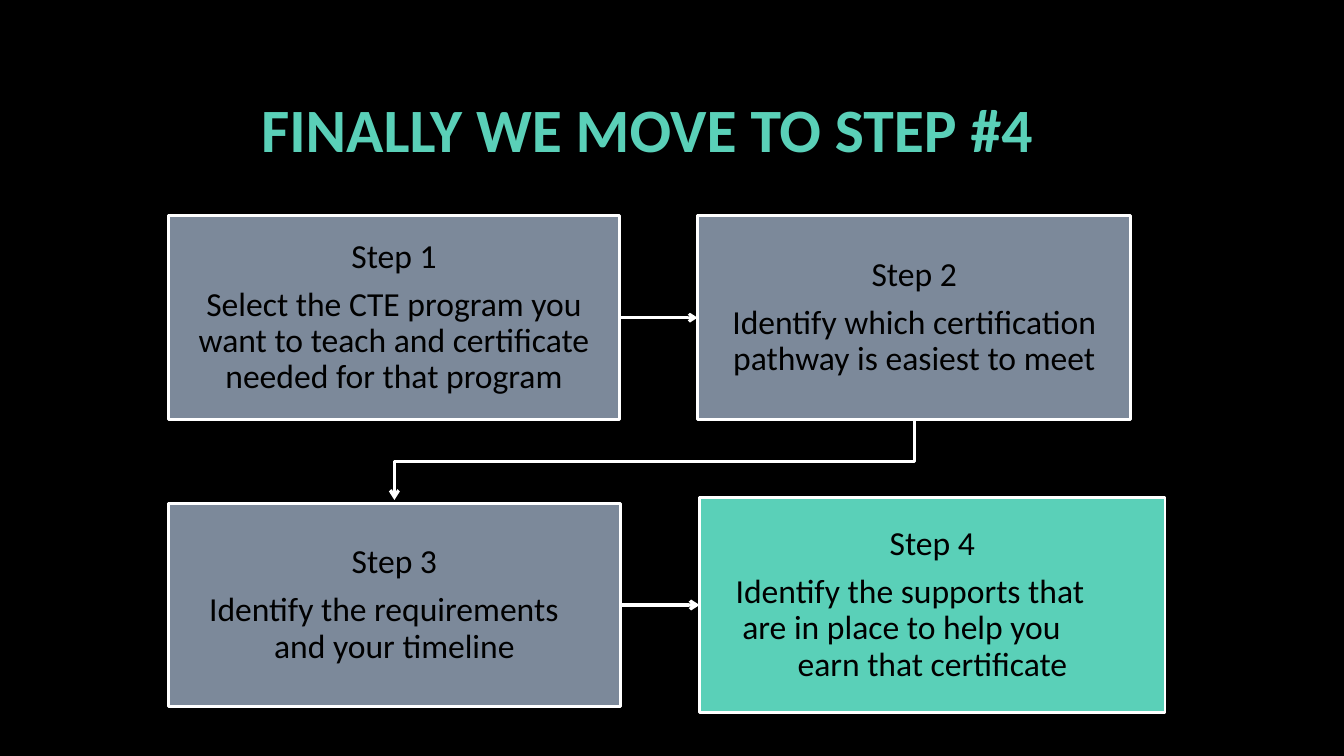
from lxml import etree
from pptx import Presentation
from pptx.dml.color import RGBColor
from pptx.enum import shapes, text
from pptx.oxml import ns
from pptx.util import Cm, Pt

COLORS = {"black": "000000", "white": "FFFFFF", "slate": "7C899A", "mint": "5AD0B8"}
CENTER, LEFT = text.PP_ALIGN.CENTER, text.PP_ALIGN.LEFT


def color(name):
    return RGBColor.from_string(COLORS[name])


def style_arrow(sp, width):
    sp.line.color.rgb = color("white")
    sp.line.width = Pt(width)
    ln = sp.element.spPr.find(ns.qn("a:ln"))
    etree.SubElement(ln, ns.qn("a:tailEnd"), type="arrow")


prs = Presentation()
prs.slide_width, prs.slide_height = Cm(33.87), Cm(19.05)
s = prs.slides.add_slide(prs.slide_layouts[5])
s.background.fill.solid()
s.background.fill.fore_color.rgb = color("black")

title = s.shapes.title
title.left, title.top, title.width, title.height = Cm(4.29), Cm(0), Cm(24.05), Cm(6.43)
tf = title.text_frame
tf.text = "FINALLY WE MOVE TO STEP #4"
tf.vertical_anchor = text.MSO_ANCHOR.MIDDLE
p = tf.paragraphs[0]
p.alignment = CENTER
font = p.runs[0].font
font.name, font.size, font.bold = "Calibri", Pt(44), True
font.color.rgb = color("mint")

steps = [
    (4.24, 5.44, 11.38, 5.13, "slate",
     [("Select the CTE program you want to teach and certificate needed for that program", None)]),
    (17.58, 5.44, 10.92, 5.13, "slate",
     [("Identify which certification pathway is easiest to meet", None)]),
    (4.24, 12.68, 11.4, 5.13, "slate",
     [("Identify the requirements", 0.6), ("and your timeline", None)]),
    (17.63, 12.54, 11.73, 5.41, "mint",
     [("Identify the supports that", 0.48), ("are in place to help you", 0.65),
      ("earn that certificate", 2.04)]),
]
boxes = []
for number, (left, top, width, height, fill, lines) in enumerate(steps, 1):
    sp = s.shapes.add_shape(shapes.MSO_SHAPE.RECTANGLE, Cm(left), Cm(top), Cm(width), Cm(height))
    sp.name = f"Step {number}"
    sp.shadow.inherit = False
    sp.fill.solid()
    sp.fill.fore_color.rgb = color(fill)
    sp.line.color.rgb = color("white")
    sp.line.width = Pt(2)
    tf = sp.text_frame
    tf.word_wrap = True
    tf.vertical_anchor = text.MSO_ANCHOR.MIDDLE
    tf.margin_left = tf.margin_right = tf.margin_top = tf.margin_bottom = Cm(0.43)
    for i, (line, indent) in enumerate([(f"Step {number}", None)] + lines):
        p = tf.add_paragraph() if i else tf.paragraphs[0]
        p.text = line
        p.line_spacing = 0.9
        p.space_after = Pt(0 if i else 8.4)
        p.alignment = CENTER if indent is None else LEFT
        if indent is not None:
            p._p.get_or_add_pPr().set("marL", str(Cm(indent)))
        font = p.runs[0].font
        font.name, font.size = "Calibri", Pt(24)
        font.color.rgb = color("black")
    boxes.append(sp)

for start, end, width in [(0, 1, 2), (2, 3, 2.25)]:
    arrow = s.shapes.add_connector(shapes.MSO_CONNECTOR.STRAIGHT, 0, 0, 0, 0)
    arrow.begin_connect(boxes[start], 3)
    arrow.end_connect(boxes[end], 1)
    style_arrow(arrow, width)
    etree.SubElement(arrow.element.spPr, ns.qn("a:effectLst"))

x_start, x_end = (b.left + b.width // 2 for b in boxes[1:3])
y_start = boxes[1].top + boxes[1].height
y_end = boxes[2].top - Cm(0.08)
y_turn = (y_start + boxes[2].top) // 2
builder = s.shapes.build_freeform(x_start, y_start)
builder.add_line_segments([(x_start, y_turn), (x_end, y_turn), (x_end, y_end)], close=False)
elbow = builder.convert_to_shape()
elbow.name = "Step 2 to Step 3"
elbow.fill.background()
style_arrow(elbow, 2.25)
elbow.shadow.inherit = False

prs.save("out.pptx")
